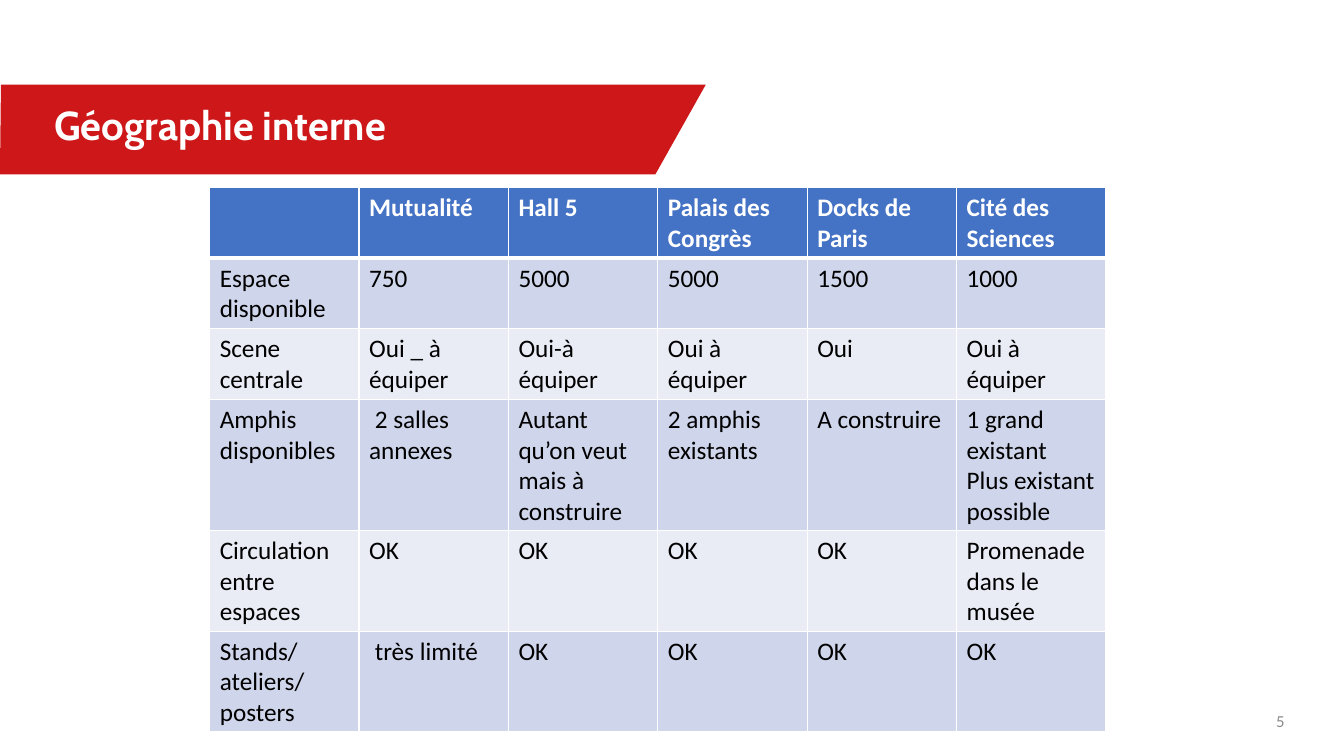
from lxml import etree
from pptx import Presentation
from pptx import util as u
from pptx.dml.color import RGBColor
from pptx.enum import text
from pptx.oxml.ns import qn

COLORS = {
    "red": "CD1719", "white": "FFFFFF", "black": "000000", "grey": "8C8C8C",
    "header": "4472C4", "dark_band": "CFD5EA", "light_band": "E9EBF5",
}

VENUES = [
    ["", "Mutualité", "Hall 5", "Palais des Congrès", "Docks de Paris", "Cité des Sciences"],
    ["Espace disponible", "750", "5000", "5000", "1500", "1000"],
    ["Scene centrale", "Oui _ à équiper", "Oui-à équiper", "Oui à équiper", "Oui", "Oui à équiper"],
    ["Amphis disponibles", " 2 salles annexes", "Autant qu’on veut mais à construire",
     "2 amphis existants", "A construire", "1 grand existant\nPlus existant possible"],
    ["Circulation entre espaces", "OK", "OK", "OK", "OK", "Promenade dans le musée"],
    ["Stands/ateliers/posters", " très limité", "OK", "OK", "OK", "OK"],
]


def rgb(name):
    return RGBColor.from_string(COLORS[name])


def write(tf, content, size=18, font="Calibri", color="black", bold=False, align=None, spacing=None):
    for i, line in enumerate(content.split("\n")):
        p = tf.paragraphs[0] if i == 0 else tf.add_paragraph()
        p.alignment = align
        p.line_spacing = spacing
        r = p.add_run()
        r.text = line
        r.font.size = u.Pt(size)
        r.font.name = font
        r.font.bold = bold
        r.font.color.rgb = rgb(color)


def add_text(s, box, content, wrap=True, anchor=text.MSO_ANCHOR.TOP, **fmt):
    tf = s.shapes.add_textbox(*map(u.Inches, box)).text_frame
    tf.word_wrap = wrap
    tf.vertical_anchor = anchor
    write(tf, content, **fmt)


def add_banner(s, box, title):
    x, y, w, h = box
    outline = [(x, y + h), (x + 0.01, y), (x + w, y), (x + w - 0.5, y + h)]
    points = [(u.Inches(px), u.Inches(py)) for px, py in outline]
    builder = s.shapes.build_freeform(*points[0], scale=1.0)
    builder.add_line_segments(points[1:], close=True)
    sp = builder.convert_to_shape()
    sp.shadow.inherit = False
    sp.fill.solid()
    sp.fill.fore_color.rgb = rgb("red")
    sp.line.fill.background()
    add_text(s, (x + 0.44, y + 0.16, w - 0.57, 0.56), title, wrap=False,
             size=28.8, font="Cabin", color="white", bold=True, spacing=0.9)


def set_borders(cell, **widths):
    tc_pr = cell._tc.get_or_add_tcPr()
    for side in "LRTB":
        ln = etree.SubElement(tc_pr, qn("a:ln" + side), w=str(u.Pt(widths.get(side, 1))))
        fill = etree.SubElement(ln, qn("a:solidFill"))
        etree.SubElement(fill, qn("a:srgbClr"), val=COLORS["white"])


def add_venue_table(s, box, rows):
    table = s.shapes.add_table(len(rows), len(rows[0]), *map(u.Inches, box)).table
    for i, values in enumerate(rows):
        band = "header" if i == 0 else "dark_band" if i % 2 else "light_band"
        rules = {0: {"B": 3}, 1: {"T": 3}}.get(i, {})
        for j, value in enumerate(values):
            cell = table.cell(i, j)
            set_borders(cell, **rules)
            cell.fill.solid()
            cell.fill.fore_color.rgb = rgb(band)
            if value:
                write(cell.text_frame, value, color="black" if i else "white", bold=i == 0)


def main():
    prs = Presentation()
    prs.slide_width = u.Inches(13.33)
    prs.slide_height = u.Inches(7.5)
    s = prs.slides.add_slide(prs.slide_layouts[6])
    add_banner(s, (0, 0.84, 7, 0.89), "Géographie interne")
    add_text(s, (12.22, 6.95, 0.62, 0.4), "5", anchor=text.MSO_ANCHOR.MIDDLE,
             size=12, color="grey", align=text.PP_ALIGN.RIGHT)
    add_venue_table(s, (2.08, 1.86, 8.89, 2.43), VENUES)
    prs.save("out.pptx")


if __name__ == "__main__":
    main()
